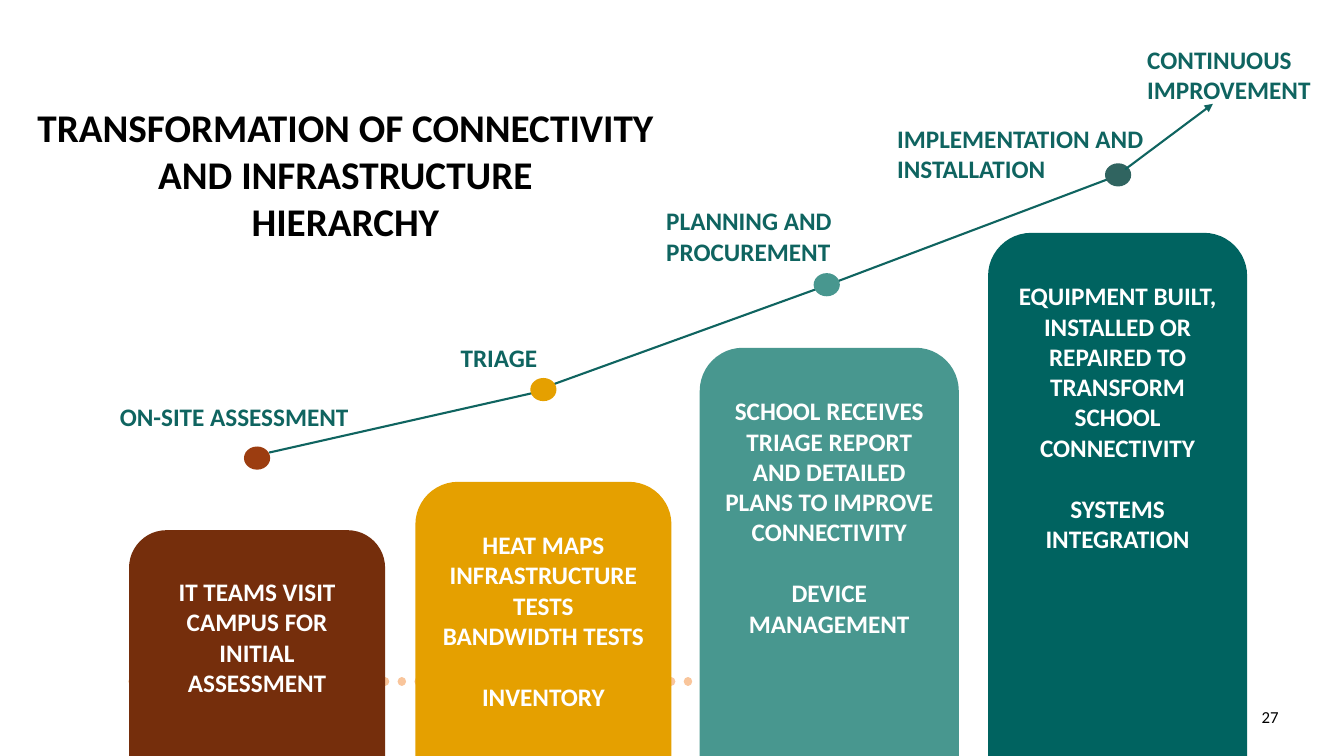
"""Build the connectivity and infrastructure hierarchy slide."""
from pptx import Presentation
from pptx.dml.color import RGBColor
from pptx.enum.dml import MSO_LINE
from pptx.enum.shapes import MSO_CONNECTOR, MSO_SHAPE
from pptx.enum.text import MSO_ANCHOR, MSO_AUTO_SIZE, PP_ALIGN
from pptx.oxml.ns import qn
from pptx.util import Pt
from lxml import etree

PX = 9144
FONT = "Calibri"
STRAIGHT = MSO_CONNECTOR.STRAIGHT
BAR, DOT = MSO_SHAPE.ROUND_2_SAME_RECTANGLE, MSO_SHAPE.OVAL
LEFT, CENTER, RIGHT = PP_ALIGN.LEFT, PP_ALIGN.CENTER, PP_ALIGN.RIGHT
TOP, MIDDLE = MSO_ANCHOR.TOP, MSO_ANCHOR.MIDDLE
NO_FIT = MSO_AUTO_SIZE.NONE
SYS_DOT = MSO_LINE.ROUND_DOT

BLACK = RGBColor(0x00, 0x00, 0x00)
WHITE = RGBColor(0xFF, 0xFF, 0xFF)
PEACH = RGBColor(0xF9, 0xC5, 0x9B)
BROWN = RGBColor(0x75, 0x2E, 0x0C)
RUST = RGBColor(0x9C, 0x3D, 0x10)
AMBER = RGBColor(0xE5, 0xA0, 0x00)
SEA = RGBColor(0x48, 0x97, 0x8F)
TEAL = RGBColor(0x00, 0x63, 0x60)
PINE = RGBColor(0x0F, 0x64, 0x60)
SLATE = RGBColor(0x30, 0x64, 0x60)

SLIDE_W, SLIDE_H = 1333, 750
DOT_W, DOT_H = 26, 23

TITLE = ["TRANSFORMATION OF CONNECTIVITY AND INFRASTRUCTURE", "HIERARCHY"]

# left, top, width, colour, groups of paragraphs
BARS = [
    (128, 526, 254, BROWN,
     [["IT TEAMS VISIT CAMPUS FOR INITIAL ASSESSMENT"]]),
    (412, 478, 254, AMBER,
     [["HEAT MAPS", "INFRASTRUCTURE TESTS", "BANDWIDTH TESTS"], ["INVENTORY"]]),
    (694, 345, 257, SEA,
     [["SCHOOL RECEIVES TRIAGE REPORT AND DETAILED PLANS TO IMPROVE CONNECTIVITY"],
      ["DEVICE MANAGEMENT"]]),
    (980, 231, 257, TEAL,
     [["EQUIPMENT BUILT, INSTALLED OR REPAIRED TO TRANSFORM SCHOOL CONNECTIVITY"],
      ["SYSTEMS", "INTEGRATION"]]),
]
TREND = [(537, 388, 267, 449), (812, 286, 544, 383), (1101, 177, 823, 282)]
DOTS = [(242, 443, RUST), (526, 375, AMBER), (807, 271, SEA), (1096, 162, SLATE)]
LABELS = [
    (109, 393, 300, 40, "ON-SITE ASSESSMENT"),
    (447, 335, 300, 40, "TRIAGE"),
    (651, 199, 300, 71, "PLANNING AND PROCUREMENT"),
    (880, 117, 300, 71, "IMPLEMENTATION AND INSTALLATION"),
    (1128, 39, 205, 71, "CONTINUOUS IMPROVEMENT"),
]


def px(*lengths):
    """Turn lengths in px into EMU."""
    return [n * PX for n in lengths]


def write(tf, groups, size, color, align=LEFT, bold=True, anchor=TOP):
    """Fill a text frame with groups of paragraphs, one line apart."""
    tf.word_wrap = True
    tf.auto_size = NO_FIT
    tf.vertical_anchor = anchor
    lines = [(text, i > 0 and j == 0)
             for i, group in enumerate(groups) for j, text in enumerate(group)]
    for n, (text, gap) in enumerate(lines):
        p = tf.add_paragraph() if n else tf.paragraphs[0]
        p.text = text
        p.alignment = align
        if gap:
            p.space_before = Pt(22)
        f = p.font
        f.name, f.size, f.bold = FONT, Pt(size), bold
        f.color.rgb = color


def add_title(s, box, lines):
    """Place and format the title placeholder."""
    sp = s.shapes.title
    sp.left, sp.top, sp.width, sp.height = px(*box)
    write(sp.text_frame, [lines], 28, BLACK, CENTER)


def add_label(s, box, text, size=18, color=PINE, **style):
    """Add a text box with one paragraph."""
    sp = s.shapes.add_textbox(*px(*box))
    write(sp.text_frame, [[text]], size, color, **style)


def add_filled(s, kind, box, color):
    """Add a preset shape with a plain fill and no outline."""
    sp = s.shapes.add_shape(kind, *px(*box))
    sp.shadow.inherit = False
    sp.fill.solid()
    sp.fill.fore_color.rgb = color
    sp.line.fill.background()
    return sp


def add_bar(s, left, top, width, color, groups):
    """Add a round-topped bar that stands on the slide's bottom edge."""
    sp = add_filled(s, BAR, (left, top, width, SLIDE_H - top), color)
    sp.text_frame.margin_top = 35 * PX
    write(sp.text_frame, groups, 18, WHITE, CENTER)


def add_line(s, ends, color=PINE, width=1.5, dotted=False, arrow=False):
    """Add a straight line, optionally dotted or with an arrowhead."""
    c = s.shapes.add_connector(STRAIGHT, *px(*ends))
    c.line.color.rgb = color
    c.line.width = Pt(width)
    spPr = c.element.spPr
    ln = spPr.find(qn("a:ln"))
    if dotted:
        c.line.dash_style = SYS_DOT
        ln.set("cap", "rnd")
    if arrow:
        etree.SubElement(ln, qn("a:tailEnd"), type="triangle")
    etree.SubElement(spPr, qn("a:effectLst"))


def main():
    """Build and save the slide."""
    prs = Presentation()
    prs.slide_width, prs.slide_height = px(SLIDE_W, SLIDE_H)
    s = prs.slides.add_slide(prs.slide_layouts[5])
    add_title(s, (22, 97, 641, 151), TITLE)
    add_line(s, (866, 676, 128, 676), PEACH, 6, dotted=True)
    for bar in BARS:
        add_bar(s, *bar)
    for ends in TREND:
        add_line(s, ends)
    for left, top, color in DOTS:
        add_filled(s, DOT, (left, top, DOT_W, DOT_H), color)
    add_line(s, (1116, 168, 1203, 103), arrow=True)
    for *box, text in LABELS:
        add_label(s, box, text)
    add_label(s, (978, 691, 300, 40), "27", 12, BLACK,
              align=RIGHT, bold=False, anchor=MIDDLE)
    prs.save("out.pptx")


if __name__ == "__main__":
    main()
